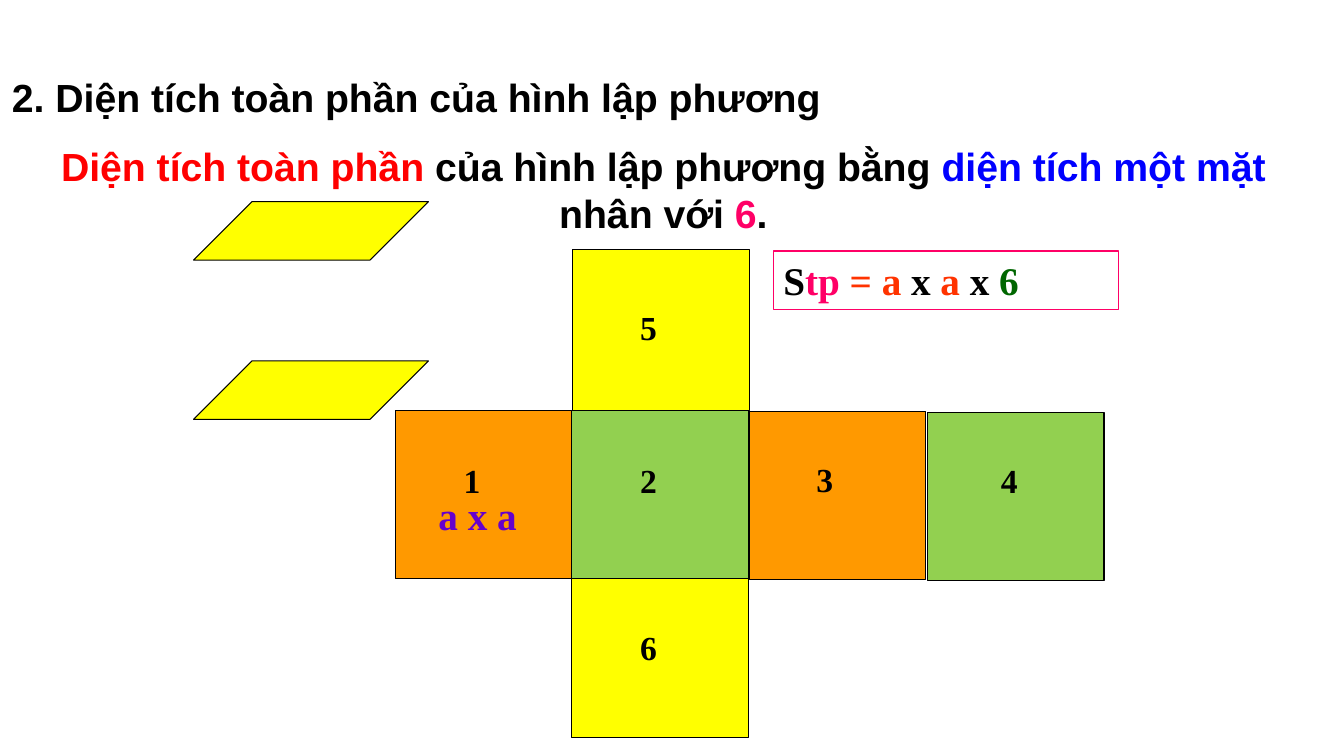
from pptx import Presentation
from pptx.dml.color import RGBColor
from pptx.enum.shapes import MSO_SHAPE
from pptx.enum.text import MSO_ANCHOR, MSO_AUTO_SIZE, PP_ALIGN
from pptx.util import Emu, Pt

RECT = MSO_SHAPE.RECTANGLE
PARALLELOGRAM = MSO_SHAPE.PARALLELOGRAM
TOP, MIDDLE = MSO_ANCHOR.TOP, MSO_ANCHOR.MIDDLE
LEFT, CENTER = PP_ALIGN.LEFT, PP_ALIGN.CENTER
GROW, FIXED = MSO_AUTO_SIZE.SHAPE_TO_FIT_TEXT, MSO_AUTO_SIZE.NONE

BLACK = RGBColor(0x00, 0x00, 0x00)
YELLOW = RGBColor(0xFF, 0xFF, 0x00)
GREEN = RGBColor(0x92, 0xD0, 0x50)
ORANGE = RGBColor(0xFF, 0x99, 0x00)
PURPLE = RGBColor(0x66, 0x00, 0xCC)
RED = RGBColor(0xFF, 0x00, 0x00)
BLUE = RGBColor(0x00, 0x00, 0xFF)
PINK = RGBColor(0xFF, 0x00, 0x66)
VERMILION = RGBColor(0xFF, 0x33, 0x00)
DARK_GREEN = RGBColor(0x00, 0x66, 0x00)

SANS, SERIF = "Arial", "Times New Roman"
PX = 9144
FACE_W = 175


def px(*lengths):
    return [Emu(n * PX) for n in lengths]


def write(sp, runs, font, size, align=LEFT, anchor=TOP, fit=GROW):
    tf = sp.text_frame
    tf.word_wrap = True
    tf.auto_size = fit
    tf.vertical_anchor = anchor
    p = tf.paragraphs[0]
    p.alignment = align
    for text, color in runs:
        r = p.add_run()
        r.text = text
        r.font.name = font
        r.font.size = Pt(size)
        r.font.bold = True
        r.font.color.rgb = color


def add_text(s, box, runs, font, size, **layout):
    write(s.shapes.add_textbox(*px(*box)), runs, font, size, **layout)


def add_outlined(s, kind, box, fill, line=BLACK):
    sp = s.shapes.add_shape(kind, *px(*box))
    sp.shadow.inherit = False
    if fill is None:
        sp.fill.background()
    else:
        sp.fill.solid()
        sp.fill.fore_color.rgb = fill
    sp.line.color.rgb = line
    sp.line.width = Pt(0.75)
    return sp


def add_slanted_faces(s, x, y, w, h):
    face_h = 58
    for top in (y, y + h - face_h):
        sp = add_outlined(s, PARALLELOGRAM, (x, top, w, face_h), YELLOW)
        sp.adjustments[0] = 1


def add_cube_net(s, x, y):
    faces = [
        ("2", 175, 159, 169, GREEN, 58, 44),
        ("4", 528, 161, 167, GREEN, 63, 42),
        ("1", 0, 159, 167, ORANGE, 58, 44),
        ("5", 176, 0, 159, YELLOW, 57, 52),
        ("6", 175, 326, 158, YELLOW, 58, 43),
        ("3", 351, 160, 167, ORANGE, 57, 42),
    ]
    for label, dx, dy, h, fill, label_dx, label_dy in faces:
        left, top = x + dx, y + dy
        add_outlined(s, RECT, (left, top, FACE_W, h), fill)
        add_text(s, (left + label_dx, top + label_dy, 33, 50),
                 [(label, BLACK)], SERIF, 24)
    add_text(s, (x + 33, y + 235, 108, 57), [("a x a", PURPLE)], SERIF, 28)


def add_heading(s, *box):
    add_text(s, box, [("2. Diện tích toàn phần của hình lập phương", BLACK)],
             SANS, 28)


def add_rule(s, *box):
    runs = [
        ("Diện tích toàn phần ", RED),
        ("của hình lập phương bằng ", BLACK),
        ("diện tích một mặt ", BLUE),
        ("nhân với ", BLACK),
        ("6", PINK),
        (".", BLACK),
    ]
    add_text(s, box, runs, SANS, 28, align=CENTER, anchor=MIDDLE, fit=FIXED)


def add_formula(s, *box):
    runs = [
        ("S", BLACK),
        ("tp", PINK),
        (" = a ", VERMILION),
        ("x", BLACK),
        (" a ", VERMILION),
        ("x ", BLACK),
        ("6", DARK_GREEN),
    ]
    write(add_outlined(s, RECT, box, None, PINK), runs, SERIF, 28)


def main():
    prs = Presentation()
    prs.slide_width, prs.slide_height = px(1333, 750)
    s = prs.slides.add_slide(prs.slide_layouts[6])
    add_slanted_faces(s, 192, 200, 233, 216)
    add_cube_net(s, 392, 248)
    add_heading(s, 2, 68, 908, 57)
    add_rule(s, 33, 75, 1250, 225)
    add_formula(s, 767, 249, 342, 58)
    prs.save("out.pptx")


if __name__ == "__main__":
    main()
